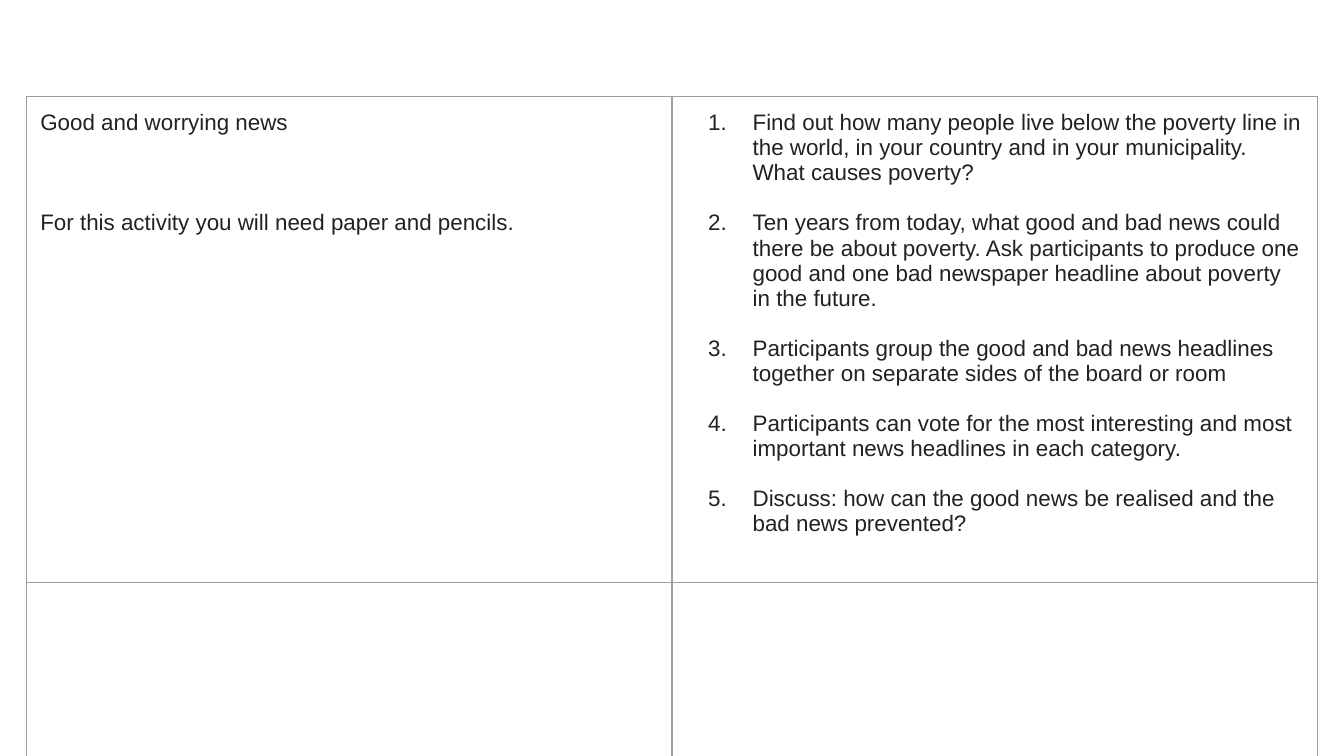
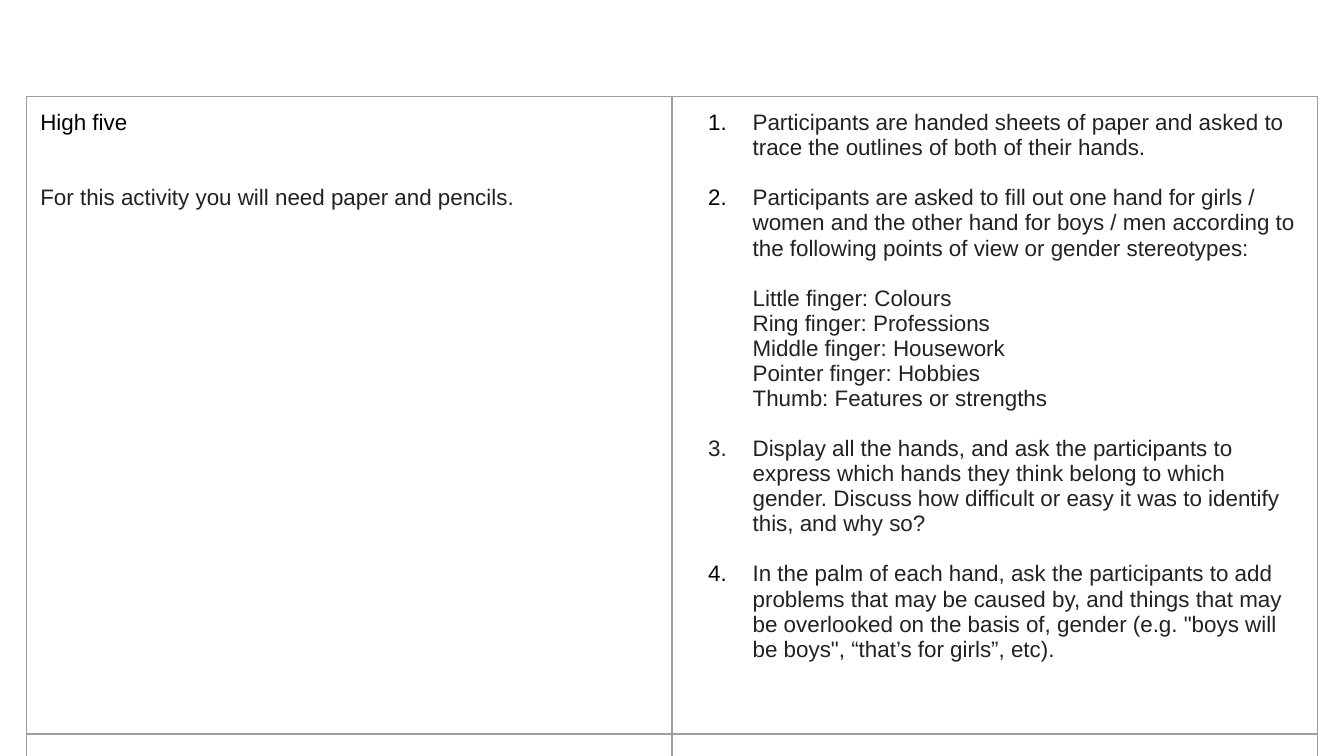
import lxml.etree
import pptx
import pptx.dml.color
import pptx.oxml.ns
import pptx.util

Pt = pptx.util.Pt
qn = pptx.oxml.ns.qn

COLOURS = {"text": "222222", "black": "000000", "border": "9E9E9E", "page": "FFFFFF"}
LINE = 13.4
SUPPLIES = "For this activity you will need paper and pencils."

ACTIVITIES = [
    {
        "title": "Good and worrying news",
        "title_colour": "text",
        "title_gap": 3 * LINE,
        "row_heights": (260, 172.8),
        "steps": [
            ("Find out how many people live below the poverty line in the world, in your country "
             "and in your municipality. What causes poverty?", "text", []),
            ("Ten years from today, what good and bad news could there be about poverty. Ask "
             "participants to produce one good and one bad newspaper headline about poverty in "
             "the future.", "text", []),
            ("Participants group the good and bad news headlines together on separate sides of "
             "the board or room", "text", []),
            ("Participants can vote for the most interesting and most important news headlines "
             "in each category.", "text", []),
            ("Discuss: how can the good news be realised and the bad news prevented?", "text", []),
        ],
    },
    {
        "title": "High five",
        "title_colour": "black",
        "title_gap": 2 * LINE,
        "row_heights": (341.3, 341.3),
        "steps": [
            ("Participants are handed sheets of paper and asked to trace the outlines of both of "
             "their hands.", "black", []),
            ("Participants are asked to fill out one hand for girls / women and the other hand "
             "for boys / men according to the following points of view or gender stereotypes:",
             "black",
             ["Little finger: Colours", "Ring finger: Professions", "Middle finger: Housework",
              "Pointer finger: Hobbies", "Thumb: Features or strengths"]),
            ("Display all the hands, and ask the participants to express which hands they think "
             "belong to which gender. Discuss how difficult or easy it was to identify this, and "
             "why so?", "text", []),
            ("In the palm of each hand, ask the participants to add problems that may be caused "
             "by, and things that may be overlooked on the basis of, gender (e.g. \"boys will be "
             "boys\", “that’s for girls”, etc).", "black", []),
        ],
    },
]

LEFT, TOP, COLUMN_WIDTH = 14.4, 51.9, 345.6
STEP_INDENT, NUMBER_HANG = 36, 23.8
FONT = {"name": "Arial", "size": Pt(12), "bold": False}
TABLE_FLAGS = {"first_row": False, "horz_banding": False}
CELL_MARGINS = dict.fromkeys(
    ("margin_left", "margin_right", "margin_top", "margin_bottom"), Pt(7.2))


def apply(target, values):
    for attribute, value in values.items():
        setattr(target, attribute, value)


def rgb(colour):
    return pptx.dml.color.RGBColor.from_string(COLOURS[colour])


def add_colour(parent, colour):
    lxml.etree.SubElement(parent, qn("a:srgbClr"), val=COLOURS[colour])


def write_paragraphs(cell, entries):
    for index, (text, colour, gap, number_colour, indented) in enumerate(entries):
        frame = cell.text_frame
        paragraph = frame.add_paragraph() if index else frame.paragraphs[0]
        paragraph.space_after = Pt(gap)
        run = paragraph.add_run()
        run.text = text
        apply(run.font, FONT)
        run.font.color.rgb = rgb(colour)
        if indented:
            properties = paragraph._p.get_or_add_pPr()
            properties.set("marL", str(Pt(STEP_INDENT)))
            properties.set("indent", str(-Pt(NUMBER_HANG) if number_colour else 0))
            if number_colour:
                add_colour(lxml.etree.SubElement(properties, qn("a:buClr")), number_colour)
                lxml.etree.SubElement(properties, qn("a:buAutoNum"), type="arabicPeriod")
            else:
                lxml.etree.SubElement(properties, qn("a:buNone"))


def style_cell(cell):
    apply(cell, CELL_MARGINS)
    properties = cell._tc.get_or_add_tcPr()
    for side in ("lnL", "lnR", "lnT", "lnB"):
        border = lxml.etree.SubElement(properties, qn("a:" + side), w=str(Pt(0.75)))
        add_colour(lxml.etree.SubElement(border, qn("a:solidFill")), "border")
    cell.fill.background()


def step_entries(steps):
    for text, number_colour, fingers in steps:
        yield text, "text", LINE, number_colour, True
        for finger in fingers:
            yield finger, "text", LINE if finger == fingers[-1] else 0, None, True


def add_activity(deck, activity):
    slide = deck.slides.add_slide(deck.slide_layouts[6])
    slide.background.fill.solid()
    slide.background.fill.fore_color.rgb = rgb("page")
    heights = activity["row_heights"]
    table = slide.shapes.add_table(
        len(heights), 2, Pt(LEFT), Pt(TOP), Pt(2 * COLUMN_WIDTH), Pt(sum(heights))).table
    apply(table, TABLE_FLAGS)
    for column in table.columns:
        column.width = Pt(COLUMN_WIDTH)
    for row, height in zip(table.rows, heights):
        row.height = Pt(height)
    for cell in table.iter_cells():
        style_cell(cell)
    write_paragraphs(table.cell(0, 0), [
        (activity["title"], activity["title_colour"], activity["title_gap"], None, False),
        (SUPPLIES, "text", 0, None, False),
    ])
    write_paragraphs(table.cell(0, 1), step_entries(activity["steps"]))


def main():
    deck = pptx.Presentation()
    apply(deck, {"slide_width": Pt(720), "slide_height": Pt(405)})
    for activity in ACTIVITIES:
        add_activity(deck, activity)
    deck.save("out.pptx")


if __name__ == "__main__":
    main()
